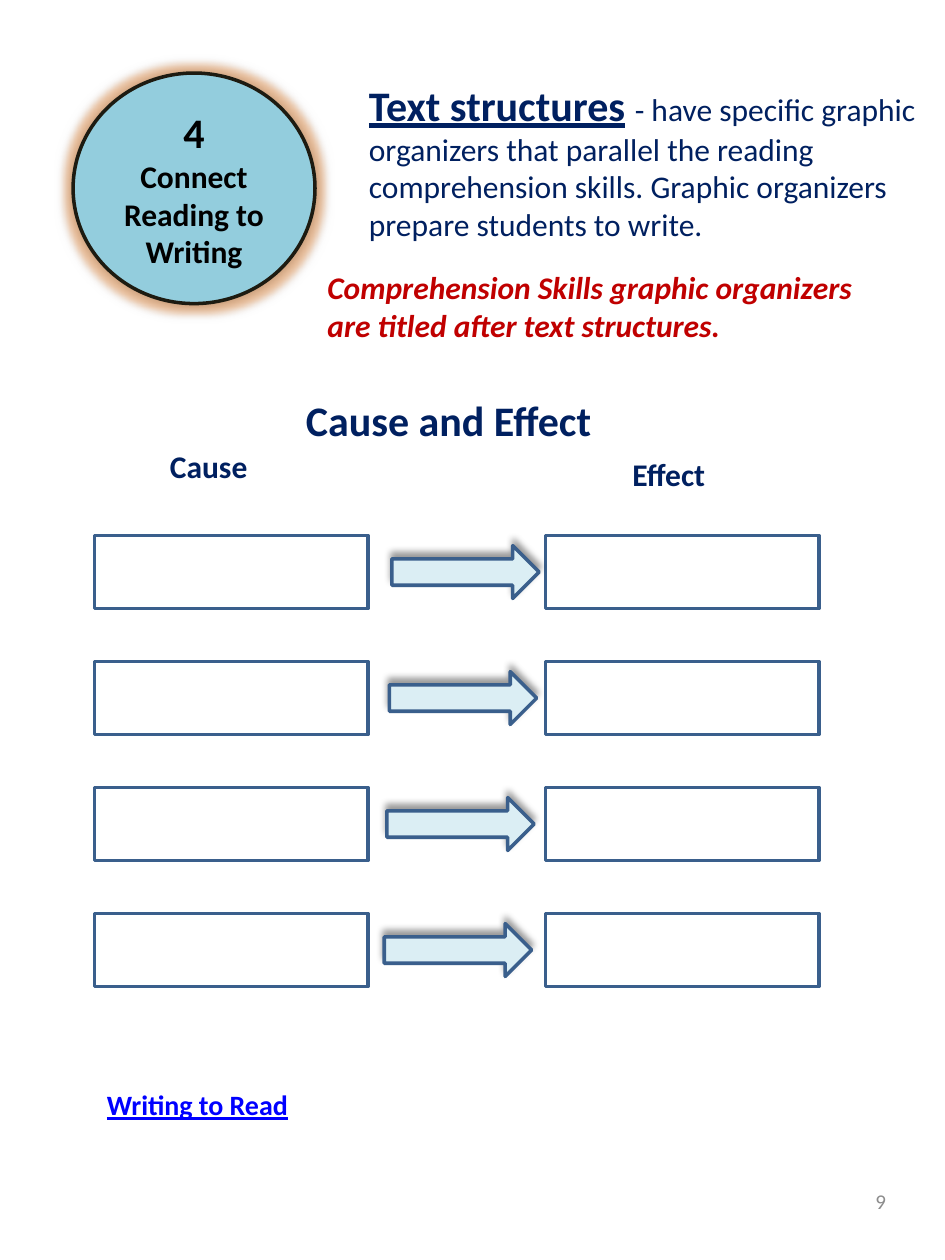
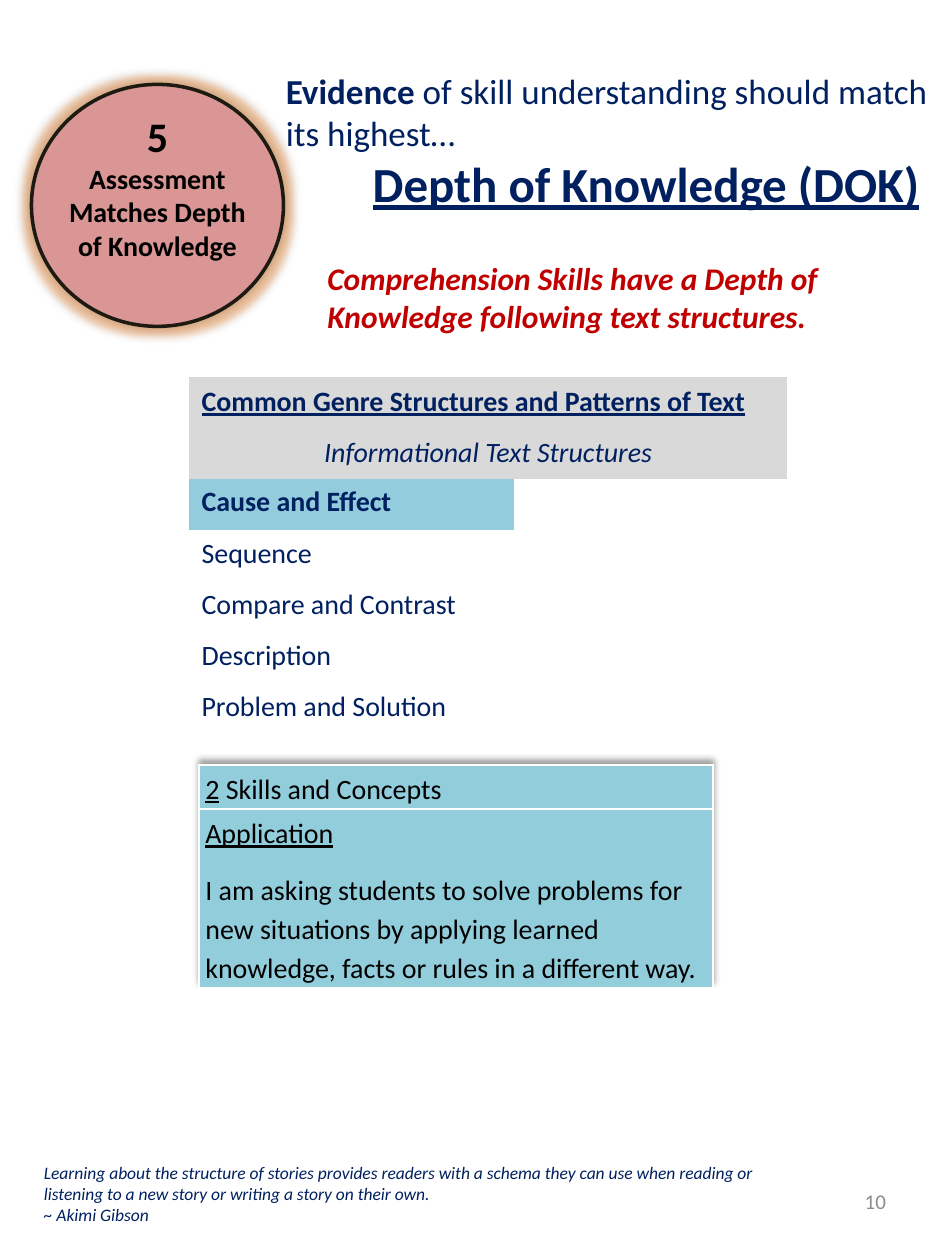
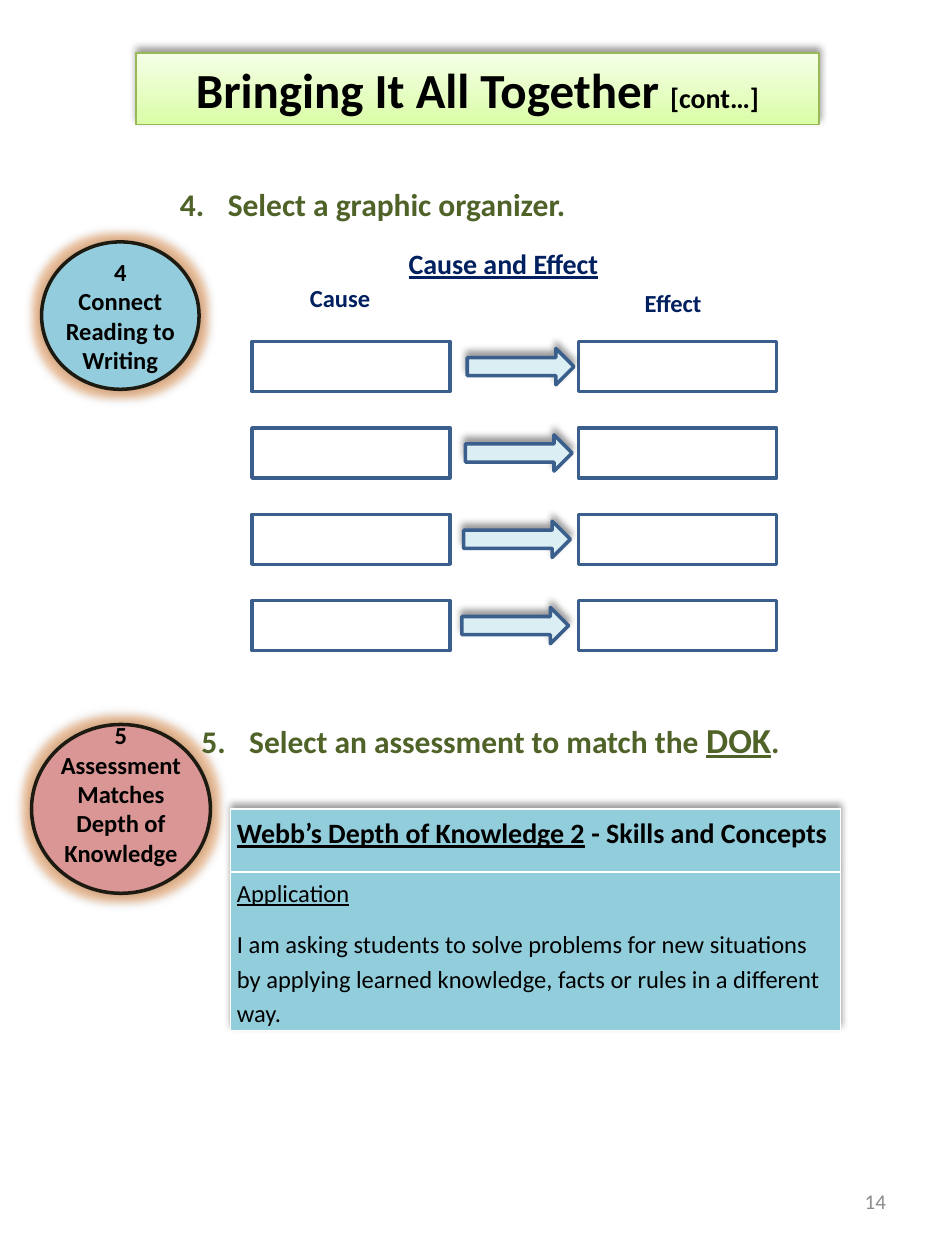
import pptx
import pptx.util
import pptx.dml.color
import pptx.enum.shapes
import pptx.enum.text
import pptx.oxml
import pptx.oxml.ns

Inches = pptx.util.Inches
Pt = pptx.util.Pt
RGBColor = pptx.dml.color.RGBColor
SHAPE = pptx.enum.shapes.MSO_SHAPE
ALIGN = pptx.enum.text.PP_ALIGN
MIDDLE = pptx.enum.text.MSO_ANCHOR.MIDDLE
FIT = pptx.enum.text.MSO_AUTO_SIZE

NAVY = RGBColor(0x00, 0x20, 0x60)
RED = RGBColor(0xC0, 0x00, 0x00)
GREEN = RGBColor(0x4F, 0x62, 0x28)
LINK_BLUE = RGBColor(0x00, 0x00, 0xFF)
GRAY = RGBColor(0x8C, 0x8C, 0x8C)
LIGHT_GRAY = RGBColor(0xD9, 0xD9, 0xD9)
BLACK = RGBColor(0x00, 0x00, 0x00)
WHITE = RGBColor(0xFF, 0xFF, 0xFF)
TEAL = RGBColor(0x93, 0xCD, 0xDD)
DOK_TEAL = RGBColor(0x92, 0xCD, 0xDC)
PINK = RGBColor(0xD9, 0x96, 0x94)
PALE_BLUE = RGBColor(0xDB, 0xEE, 0xF4)
STEEL = RGBColor(0x3A, 0x5F, 0x8C)
INK = RGBColor(0x1D, 0x1B, 0x11)
LIME = RGBColor(0xDA, 0xFD, 0xA7)
PALE_LIME = RGBColor(0xF5, 0xFF, 0xE7)
LIME_EDGE = RGBColor(0x98, 0xB9, 0x55)

FONT = "Calibri"
NS = pptx.oxml.ns.nsdecls("a")
EFFECTS = pptx.oxml.ns.qn("a:effectLst")
PLAIN_TABLE = "{2D5ABB26-0587-4C30-8999-92F81FD0307C}"
DARK = '<a:srgbClr val="000000"><a:alpha val="40000"/></a:srgbClr>'
LIFT = f'<a:outerShdw {NS} blurRad="50800" dist="38100" dir="16200000" rotWithShape="0">{DARK}</a:outerShdw>'
HALO = (
    f'<a:glow {NS} rad="101600"><a:srgbClr val="F79646"><a:satMod val="175000"/><a:alpha val="40000"/></a:srgbClr></a:glow>',
    f'<a:outerShdw {NS} blurRad="63500" dist="0" dir="0" rotWithShape="0">{DARK}</a:outerShdw>',
)


def write(frame, color, paragraphs, align=ALIGN.LEFT):
    for index, runs in enumerate(paragraphs):
        paragraph = frame.add_paragraph() if index else frame.paragraphs[0]
        paragraph.alignment = align
        paragraph.font.name = FONT
        paragraph.font.color.rgb = color
        for text, size, style in runs:
            run = paragraph.add_run()
            run.text = text
            font = paragraph.font if len(runs) == 1 else run.font
            font.size = Pt(size)
            font.bold = "b" in style
            font.italic = "i" in style
            font.underline = "u" in style


def add_text(slide, at, color, paragraphs, wrap=True):
    frame = slide.shapes.add_textbox(*map(Inches, at)).text_frame
    frame.word_wrap = wrap
    frame.auto_size = FIT.SHAPE_TO_FIT_TEXT
    write(frame, color, paragraphs)
    return frame


prs = pptx.Presentation()
prs.slide_width = Inches(7.5)
prs.slide_height = Inches(10)
title_only, blank = prs.slide_layouts[5], prs.slide_layouts[6]
writing = prs.slides.add_slide(blank)
depth = prs.slides.add_slide(blank)
together = prs.slides.add_slide(title_only)
lifted = []

for slide, number in ((writing, "9"), (depth, "10"), (together, "14")):
    page = slide.shapes.add_textbox(Inches(5.38), Inches(9.27), Inches(1.75), Inches(0.53)).text_frame
    page.word_wrap = True
    page.vertical_anchor = MIDDLE
    write(page, GRAY, [[(number, 12, "")]], ALIGN.RIGHT)

connect = "Connect Reading to Writing"
for slide, at, fill, bottom, lines in (
    (writing, (0.58, 0.58, 1.92, 1.83), TEAL, 0, (("4", 24), (connect, 18))),
    (depth, (0.25, 0.67, 2, 1.92), PINK, 0.3, (("5", 24), ("Assessment Matches Depth of Knowledge", 16))),
    (together, (0.33, 1.92, 1.25, 1.17), TEAL, 0, (("4", 14), (connect, 14))),
    (together, (0.25, 5.75, 1.42, 1.34), PINK, 0.24,
     (("5", 14), ("Assessment", 14), ("Matches Depth of Knowledge", 14))),
):
    badge = slide.shapes.add_shape(SHAPE.OVAL, *map(Inches, at))
    badge.fill.solid()
    badge.fill.fore_color.rgb = fill
    badge.line.color.rgb = INK
    badge.line.width = Pt(2)
    badge.shadow.inherit = False
    for effect in HALO:
        badge._element.spPr.find(EFFECTS).append(pptx.oxml.parse_xml(effect))
    frame = badge.text_frame
    frame.word_wrap = True
    frame.vertical_anchor = MIDDLE
    frame.margin_left = frame.margin_right = frame.margin_top = 0
    frame.margin_bottom = Inches(bottom)
    write(frame, BLACK, [[(text, size, "b")] for text, size in lines], ALIGN.CENTER)

for slide, left, top, scale_x, scale_y, heading, label in (
    (writing, 0.75, 3.08, 1, 1, (2.5, 24, "b"), (0.82, 18, "b")),
    (together, 2, 1.91, 0.724, 0.685, (2.17, 16, "bu"), (0.86, 14, "b")),
):
    for text, x, y, (width, size, style) in (
        ("Cause and Effect", 1.58, 0, heading),
        ("Cause", 0.5, 0.42, label),
        ("Effect", 4.17, 0.48, label),
    ):
        at = (left + x * scale_x, top + y * scale_y, width, 0.4)
        add_text(slide, at, NAVY, [[(text, size, style)]], wrap=False)
    for row in range(4):
        for kind, x, y, width, height, fill in (
            (SHAPE.RECTANGLE, 0, 1.17, 2.17, 0.58, WHITE),
            (SHAPE.RECTANGLE, 3.58, 1.17, 2.17, 0.58, WHITE),
            (SHAPE.RIGHT_ARROW, 2.36 - 0.02 * row, 1.25, 1.17, 0.42, PALE_BLUE),
        ):
            step = slide.shapes.add_shape(
                kind, Inches(left + x * scale_x), Inches(top + (y + row) * scale_y),
                Inches(width * scale_x), Inches(height * scale_y))
            step.fill.solid()
            step.fill.fore_color.rgb = fill
            step.line.color.rgb = STEEL
            step.line.width = Pt(2)
            step.shadow.inherit = False
            if kind == SHAPE.RIGHT_ARROW:
                lifted.append(step)

add_text(writing, (2.83, 0.58, 4.67, 1.41), NAVY, [[
    ("Text structures", 24, "bu"),
    (" ", 24, ""),
    ("- have specific graphic organizers that parallel the reading comprehension skills. "
     "Graphic organizers prepare students to write.", 18, ""),
]])
add_text(writing, (0.75, 8.58, 2.08, 0.37), LINK_BLUE, [[("Writing to Read", 16, "bu")]])

for slide, top, message in (
    (writing, 2.08, "Comprehension Skills graphic organizers are titled after text structures."),
    (depth, 2.01, "Comprehension Skills have a Depth of Knowledge following text structures."),
):
    add_text(slide, (2.5, top, 4.42, 0.71), RED, [[(message, 18, "bi")]])

evidence = add_text(depth, (2.17, 0.5, 5.33, 1.25), NAVY, [
    [("Evidence", 20, "b"), (" of skill understanding should match its highest…", 20, "")],
    [("Depth of Knowledge (DOK)", 28, "bu")],
])
evidence.paragraphs[1]._p.get_or_add_pPr().set("marL", str(Inches(0.69)))

add_text(depth, (0.25, 9.17, 6.17, 0.61), NAVY, [
    [("Learning about the structure of stories provides readers with a schema they can use "
      "when reading or listening to a new story or writing a story on their own.", 10, "i")],
    [("~ Akimi Gibson", 10, "i")],
])

structures = (
    ("Common Genre Structures and Patterns of Text", "bu", LIGHT_GRAY),
    ("Informational Text Structures", "i", LIGHT_GRAY),
    ("Cause and Effect", "b", TEAL),
    ("Sequence", "", None),
    ("Compare and Contrast", "", WHITE),
    ("Description", "", None),
    ("Problem and Solution", "", None),
)
genres = depth.shapes.add_table(
    len(structures), 2, Inches(1.5), Inches(2.99), Inches(4.75), Inches(2.84)).table
genres._tbl.tblPr.find(pptx.oxml.ns.qn("a:tableStyleId")).text = PLAIN_TABLE
genres.first_row = genres.horz_banding = False
genres.columns[0].width = Inches(2.58)
genres.columns[1].width = Inches(2.17)
for row, (text, style, fill) in enumerate(structures):
    genres.rows[row].height = Inches(2.84 / len(structures))
    cell, neighbor = genres.cell(row, 0), genres.cell(row, 1)
    neighbor.fill.background()
    if fill is None:
        cell.fill.background()
    else:
        cell.fill.solid()
        cell.fill.fore_color.rgb = fill
    if row < 2:
        cell.merge(neighbor)
        cell.vertical_anchor = MIDDLE
    write(cell.text_frame, NAVY, [[(text, 16, style)]], ALIGN.CENTER if row == 1 else ALIGN.LEFT)

application = ("I am asking students to solve problems for new situations by applying "
               "learned knowledge, facts or rules in a different way.")
for slide, left, top, widths, heights, level, size in (
    (depth, 1.58, 6.07, (2.04, 0.11, 1.93), (0.35, 1.42),
     [("2", 16, "u"), (" Skills and Concepts", 16, "")], 16),
    (together, 1.83, 6.42, (2.42, 0.13, 2.29), (0.5, 1.26),
     [("Webb’s Depth of Knowledge 2", 16, "bu"), (" - Skills and Concepts", 16, "b")], 14),
):
    dok = slide.shapes.add_table(
        2, 3, Inches(left), Inches(top), Inches(sum(widths)), Inches(sum(heights))).table
    properties = dok._tbl.tblPr
    properties.find(pptx.oxml.ns.qn("a:tableStyleId")).text = PLAIN_TABLE
    properties.insert(0, pptx.oxml.parse_xml(f"<a:effectLst {NS}>{LIFT}</a:effectLst>"))
    dok.first_row = dok.horz_banding = False
    for column, width in zip(dok.columns, widths):
        column.width = Inches(width)
    for row, height in zip(dok.rows, heights):
        row.height = Inches(height)
        for cell in row.cells:
            cell.fill.solid()
            cell.fill.fore_color.rgb = DOK_TEAL
            cell.margin_left = cell.margin_right = Inches(0.05)
            cell.margin_top = cell.margin_bottom = Inches(0.02)
            for position, side in enumerate("LRTB"):
                cell._tc.get_or_add_tcPr().insert(position, pptx.oxml.parse_xml(
                    f'<a:ln{side} {NS} w="12700"><a:solidFill><a:srgbClr val="FFFFFF"/>'
                    f"</a:solidFill></a:ln{side}>"))
    for row, content in enumerate(([level], [[("Application", size, "u")], [(application, size, "")]])):
        cell = dok.cell(row, 0)
        cell.merge(dok.cell(row, 2))
        write(cell.text_frame, BLACK, content)
        for paragraph in cell.text_frame.paragraphs:
            paragraph.line_spacing = 1.15
            paragraph.space_after = Pt(10)

banner = together.shapes.title
banner.left, banner.top, banner.width, banner.height = map(Inches, (1.08, 0.42, 5.42, 0.57))
banner.fill.gradient()
banner.fill.gradient_angle = 90
for stop, color in zip(banner.fill.gradient_stops, (LIME, PALE_LIME)):
    stop.color.rgb = color
banner.line.color.rgb = LIME_EDGE
banner.line.width = Pt(0.75)
banner.shadow.inherit = False
lifted.append(banner)
banner.text_frame.auto_size = FIT.NONE
banner.text_frame.vertical_anchor = pptx.enum.text.MSO_ANCHOR.TOP
write(banner.text_frame, BLACK,
      [[("Bringing It All Together ", 28, "b"), ("[cont…]", 16, "b")]], ALIGN.CENTER)

for number, at, runs in (
    (4, (1.33, 1.42, 4.67, 0.4), [("Select a graphic organizer.", 18, "b")]),
    (5, (1.5, 5.65, 5.33, 0.44),
     [("Select an assessment to match the ", 18, "b"), ("DOK", 20, "bu"), (".", 18, "b")]),
):
    step_properties = add_text(together, at, GREEN, [runs]).paragraphs[0]._p.get_or_add_pPr()
    step_properties.set("marL", str(Inches(0.38)))
    step_properties.set("indent", str(Inches(-0.38)))
    step_properties.insert(0, pptx.oxml.parse_xml(
        f'<a:buAutoNum {NS} type="arabicPeriod" startAt="{number}"/>'))

for shape in lifted:
    shape._element.spPr.find(EFFECTS).append(pptx.oxml.parse_xml(LIFT))

prs.save("out.pptx")
